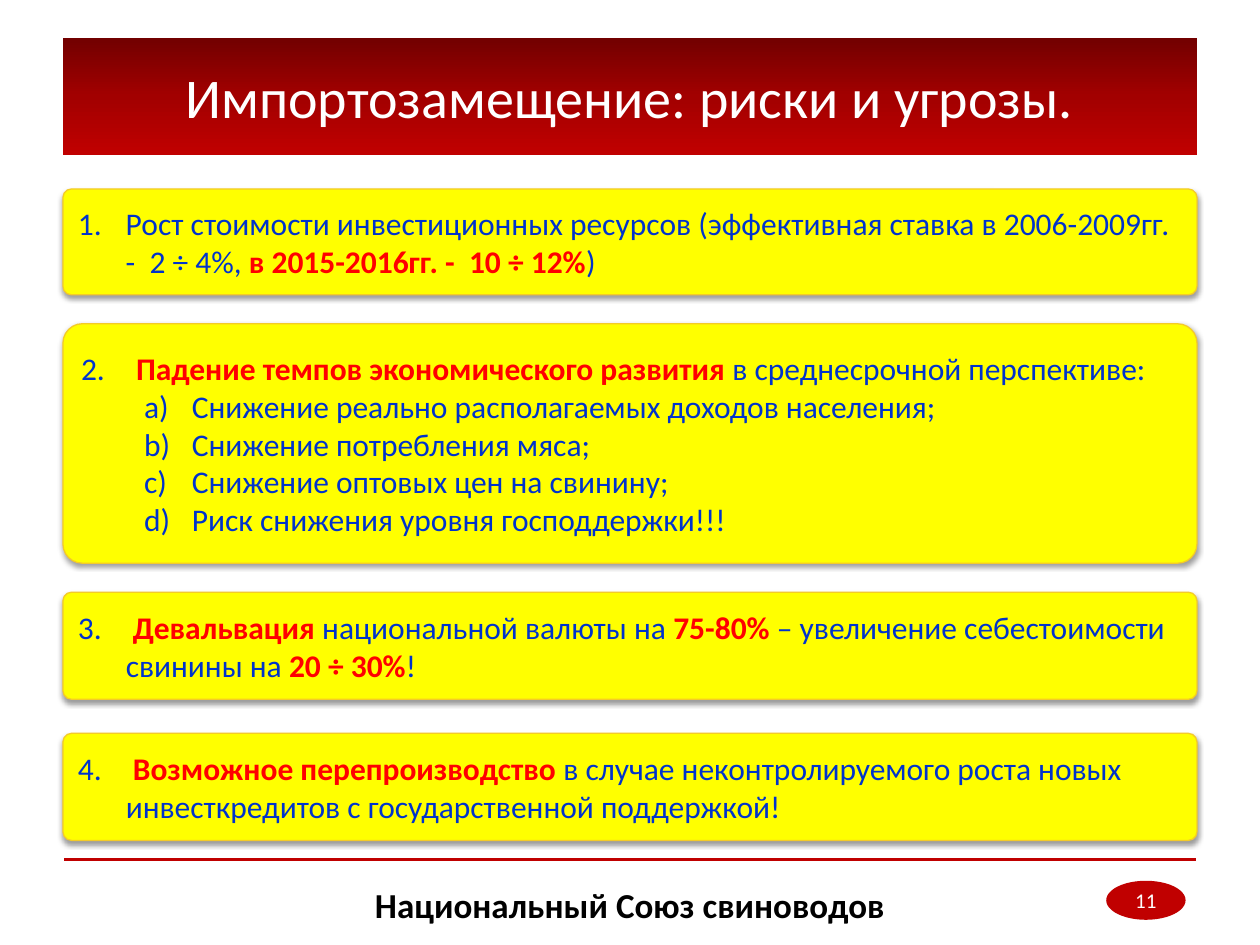
from lxml import etree
from pptx import Presentation
from pptx.dml.color import RGBColor
from pptx.enum.shapes import MSO_CONNECTOR, MSO_SHAPE
from pptx.enum.text import MSO_ANCHOR, PP_ALIGN
from pptx.oxml import parse_xml
from pptx.oxml.ns import nsdecls, qn
from pptx.util import Inches, Pt

RED, BLUE, CRIMSON, WHITE = "FF0000", "0033CC", "C00000", "FFFFFF"


def color(value):
    return RGBColor.from_string(value)


def add_text(para, text, size, ink, bold=False):
    span = para.add_run()
    span.text = text
    span.font.color.rgb = color(ink)
    for name, value in {"name": "Calibri", "size": Pt(size), "bold": bold}.items():
        setattr(span.font, name, value)


deck = Presentation()
deck.slide_width, deck.slide_height = Inches(10), Inches(7.5)
page = deck.slides.add_slide(deck.slide_layouts[5])

# Title on a red gradient
title = page.shapes.title
place = {"left": 0.5, "top": 0.3, "width": 9, "height": 0.93}
for name, value in place.items():
    setattr(title, name, Inches(value))
stops = "".join(
    f'<a:gs pos="{position * 1000}"><a:srgbClr val="{shade}"/></a:gs>'
    for position, shade in [(0, "720000"), (50, "A20000"), (100, CRIMSON)]
)
title._element.spPr.append(parse_xml(
    f'<a:gradFill {nsdecls("a")} rotWithShape="1"><a:gsLst>{stops}</a:gsLst>'
    '<a:lin ang="5400000" scaled="0"/></a:gradFill>'
))
title.text_frame.vertical_anchor = MSO_ANCHOR.MIDDLE
para = title.text_frame.paragraphs[0]
para.alignment = PP_ALIGN.CENTER
add_text(para, "Импортозамещение: риски и угрозы.", 32, WHITE)

# Risk cards: top, height, main paragraph as (text, highlighted), sub-items
cards = [
    (1.5, 0.84, [
        ("Рост стоимости инвестиционных ресурсов (эффективная ставка в 2006-2009гг. -  2 ÷ 4%, ", False),
        ("в 2015-2016гг. -  10 ÷ 12%", True),
        (")", False),
    ], []),
    (2.57, 1.9, [
        (" ", False),
        ("Падение темпов экономического развития ", True),
        ("в среднесрочной перспективе:", False),
    ], [
        "Снижение реально располагаемых доходов населения;",
        "Снижение потребления мяса;",
        "Снижение оптовых цен на свинину;",
        "Риск снижения уровня господдержки!!!",
    ]),
    (4.7, 0.85, [
        (" ", False),
        ("Девальвация ", True),
        ("национальной валюты на ", False),
        ("75-80% ", True),
        ("– увеличение себестоимости свинины на ", False),
        ("20 ÷ 30%", True),
        ("!", False),
    ], []),
    (5.82, 0.85, [
        (" ", False),
        ("Возможное перепроизводство", True),
        (" в случае неконтролируемого роста новых инвесткредитов с государственной поддержкой!", False),
    ], []),
]
for number, (top, height, main, items) in enumerate(cards, 1):
    card = page.shapes.add_shape(
        MSO_SHAPE.ROUNDED_RECTANGLE, Inches(0.5), Inches(top), Inches(9), Inches(height))
    card.adjustments[0] = 0.081
    card.fill.solid()
    card.fill.fore_color.rgb = color("FFFF00")
    card.line.color.rgb = color("F4CB27")
    card.line.width = Pt(0.75)
    card.shadow.inherit = False
    card._element.spPr.find(qn("a:effectLst")).append(parse_xml(
        f'<a:outerShdw {nsdecls("a")} blurRad="{Pt(3.1)}" dist="{Pt(1.6)}" dir="5400000" '
        'rotWithShape="0"><a:srgbClr val="000000"><a:alpha val="38000"/></a:srgbClr></a:outerShdw>'
    ))
    frame = card.text_frame
    frame.word_wrap = True
    frame.vertical_anchor = MSO_ANCHOR.MIDDLE

    for index, spans in enumerate([main] + [[(item, False)] for item in items]):
        para = frame.add_paragraph() if index else frame.paragraphs[0]
        para.alignment = PP_ALIGN.LEFT
        para.level = 1 if index else 0
        props = para._p.get_or_add_pPr()
        props.set("marL", str(Inches(0.88 if index else 0.38)))
        props.set("indent", str(Inches(-0.38)))
        bullet = etree.SubElement(props, qn("a:buAutoNum"))
        bullet.set("type", "alphaLcParenR" if index else "arabicPeriod")
        if not index:
            bullet.set("startAt", str(number))
        for text, highlighted in spans:
            add_text(para, text, 18, RED if highlighted else BLUE, highlighted)

# Footer rule
rule = page.shapes.add_connector(
    MSO_CONNECTOR.STRAIGHT, Inches(0.51), Inches(6.82), Inches(9.49), Inches(6.82))
rule.line.color.rgb = color(CRIMSON)
rule.line.width = Pt(1.5)
etree.SubElement(rule._element.spPr, qn("a:effectLst"))

# Footer name and page number
footer = page.shapes.add_textbox(Inches(2.01), Inches(6.98), Inches(5.98), Inches(0.4))
badge = page.shapes.add_shape(
    MSO_SHAPE.OVAL, Inches(8.78), Inches(6.99), Inches(0.63), Inches(0.31))
badge.shadow.inherit = False
badge.fill.solid()
badge.fill.fore_color.rgb = color(CRIMSON)
badge.line.fill.background()
for box, text, size, ink, bold, wrap in [
    (footer, "Национальный Союз свиноводов", 20, "000000", True, True),
    (badge, "11", 12, WHITE, False, False),
]:
    box.text_frame.word_wrap = wrap
    box.text_frame.vertical_anchor = MSO_ANCHOR.MIDDLE
    para = box.text_frame.paragraphs[0]
    para.alignment = PP_ALIGN.CENTER
    add_text(para, text, size, ink, bold)

deck.save("out.pptx")
